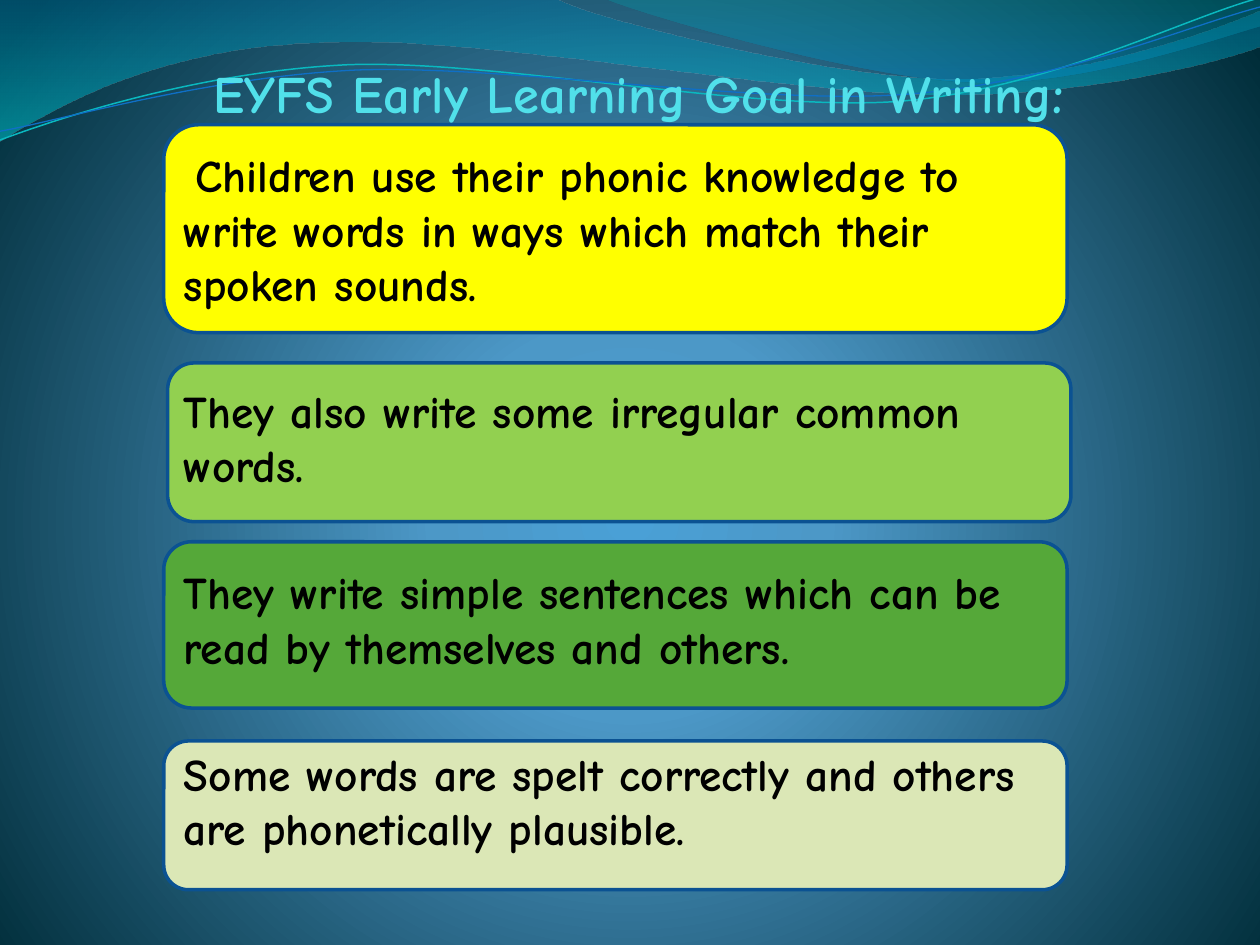
from dataclasses import dataclass

from pptx import Presentation
from pptx.dml.color import RGBColor
from pptx.enum.shapes import MSO_SHAPE
from pptx.enum.text import MSO_ANCHOR, MSO_AUTO_SIZE, PP_ALIGN
from pptx.oxml import parse_xml
from pptx.oxml.ns import nsdecls
from pptx.util import Pt

ROUNDED = MSO_SHAPE.ROUNDED_RECTANGLE
BOTTOM, TOP = MSO_ANCHOR.BOTTOM, MSO_ANCHOR.TOP
NO_FIT = MSO_AUTO_SIZE.NONE
CENTER, LEFT = PP_ALIGN.CENTER, PP_ALIGN.LEFT
DOWNWARD = '<a:lin ang="5400000" scaled="0"/>'
RADIAL = ('<a:path path="circle"><a:fillToRect l="10000" t="110000" '
          'r="10000" b="100000"/></a:path>')


@dataclass(frozen=True)
class Theme:
    font: str = "Comic Neue"
    title: str = "51E0EA"
    text: str = "000000"
    border: str = "0B5292"
    border_width: float = 2
    title_size: float = 30
    colon_size: float = 32
    indent_size: float = 18.5
    body_size: float = 25.9
    first_gap: float = 5.2
    goal_gap: float = 41.4


@dataclass(frozen=True)
class Stop:
    position: int
    color: str
    opacity: int = 100


@dataclass(frozen=True)
class Wave:
    start: tuple
    segments: tuple
    stops: tuple = ()
    line: str = ""
    width: float = 0


@dataclass(frozen=True)
class Card:
    left: float
    top: float
    height: float
    color: str
    goal: str


THEME = Theme()
CARD_WIDTH = 516.2
BACKGROUND = (Stop(0, "4AA0D6"), Stop(25, "4C98C7"), Stop(100, "002C38"))
WAVES = (
    Wave((0, -0.5), (
        (317, -1),
        (343, 12, 478, 45, 546, 45), (614, 45, 690, 19, 720, 6),
        (721, 26),
        (708, 32, 626, 55, 537, 54), (448, 54, 275, 20, 185, 24),
        (93, 26, 33, 60, -1, 81)),
        stops=(Stop(0, "0074A1", 45), Stop(100, "00C6CF", 55))),
    Wave((345, -1), (
        (366, 8, 491, 45, 554, 47), (616, 50, 692, 23, 720, 15), (720, 0)),
        stops=(Stop(0, "00A1A9", 30), Stop(80, "008BBF", 45))),
    Wave((0, 80), (
        (35, 67, 114, 41, 199, 37), (284, 34, 427, 64, 513, 58),
        (599, 51, 675, 11, 719, -1)), line="0AB8BF", width=0.85),
    Wave((0, 75), (
        (34, 69, 118, 44, 204, 40), (290, 37, 430, 60, 516, 54),
        (602, 48, 678, 15, 720, 4)), line="0F6FC6", width=0.75),
)
CARDS = (
    Card(93.6, 71.3, 118.8, "FFFF00",
         "Children use their phonic knowledge to write words in ways "
         "which match their spoken sounds."),
    Card(95.8, 207.4, 90.7, "92D050",
         "They also write some irregular common words."),
    Card(93.6, 309.6, 95, "55A839",
         "They write simple sentences which can be read by themselves "
         "and others."),
    Card(93.6, 423.4, 85, "DBE7B6",
         "Some words are spelt correctly and others are phonetically "
         "plausible."),
)


def rgb(color: str) -> RGBColor:
    return RGBColor.from_string(color)


def set_gradient(owner, fill, stops: tuple, direction: str) -> None:
    fill.background()
    blank = owner.xpath(".//a:noFill")[0]
    marks = "".join(
        f'<a:gs pos="{s.position * 1000}"><a:srgbClr val="{s.color}">'
        f'<a:alpha val="{s.opacity * 1000}"/></a:srgbClr></a:gs>'
        for s in stops)
    blank.getparent().replace(blank, parse_xml(
        f'<a:gradFill {nsdecls("a")} rotWithShape="1">'
        f"<a:gsLst>{marks}</a:gsLst>{direction}</a:gradFill>"))


def bend_lines(sp, segments: tuple) -> None:
    lines = iter(sp._element.xpath(".//a:lnTo"))
    for segment in segments:
        steps = [next(lines) for _ in range(len(segment) // 2)]
        if len(steps) == 1:
            continue
        curve = parse_xml(f'<a:cubicBezTo {nsdecls("a")}/>')
        steps[0].addprevious(curve)
        for step in steps:
            curve.append(step[0])
            step.getparent().remove(step)


def draw_wave(shapes, wave: Wave) -> None:
    points = [(Pt(seg[i]), Pt(seg[i + 1]))
              for seg in wave.segments for i in range(0, len(seg), 2)]
    builder = shapes.build_freeform(*(Pt(v) for v in wave.start))
    builder.add_line_segments(points, close=bool(wave.stops))
    sp = builder.convert_to_shape()
    bend_lines(sp, wave.segments)
    sp.shadow.inherit = False
    if wave.stops:
        set_gradient(sp._element.spPr, sp.fill, wave.stops, DOWNWARD)
        sp.line.fill.background()
    else:
        sp.fill.background()
        sp.line.color.rgb = rgb(wave.line)
        sp.line.width = Pt(wave.width)


def draw_card(shapes, card: Card) -> None:
    sp = shapes.add_shape(ROUNDED, Pt(card.left), Pt(card.top),
                          Pt(CARD_WIDTH), Pt(card.height))
    sp.shadow.inherit = False
    sp.fill.solid()
    sp.fill.fore_color.rgb = rgb(card.color)
    sp.line.color.rgb = rgb(THEME.border)
    sp.line.width = Pt(THEME.border_width)


def place_text(sp, box: tuple, anchor, inset: float):
    sp.left, sp.top, sp.width, sp.height = (Pt(v) for v in box)
    tf = sp.text_frame
    tf.word_wrap = True
    tf.auto_size = NO_FIT
    tf.vertical_anchor = anchor
    tf.margin_left, tf.margin_right = Pt(0), Pt(1.44)
    tf.margin_top = tf.margin_bottom = Pt(inset)
    return tf


def style(p, size: float, color: str, align) -> None:
    p.alignment = align
    p.font.name = THEME.font
    p.font.size = Pt(size)
    p.font.bold = True
    p.font.color.rgb = rgb(color)


def add_run(p, text: str, size: float) -> None:
    r = p.add_run()
    r.text = text
    r.font.size = Pt(size)


def main() -> None:
    prs = Presentation()
    prs.slide_width, prs.slide_height = Pt(720), Pt(540)
    s = prs.slides.add_slide(prs.slide_layouts[0])
    set_gradient(s._element.cSld, s.background.fill, BACKGROUND, RADIAL)
    title, body = s.placeholders
    for wave in WAVES:
        draw_wave(s.shapes, wave)
    for card in reversed(CARDS):
        draw_card(s.shapes, card)

    p = place_text(title, (87.8, 20.2, 555.8, 51.1), BOTTOM, 0).paragraphs[0]
    style(p, THEME.title_size, THEME.title, CENTER)
    add_run(p, "EYFS Early Learning Goal in Writing", THEME.title_size)
    add_run(p, ":", THEME.colon_size)

    tf = place_text(body, (105.1, 80.6, 504.7, 421.9), TOP, 3.6)
    for i, card in enumerate(CARDS):
        p = tf.add_paragraph() if i else tf.paragraphs[0]
        style(p, THEME.body_size, THEME.text, LEFT)
        p.space_before = Pt(THEME.goal_gap if i else THEME.first_gap)
        if i == 0:
            add_run(p, " ", THEME.indent_size)
        add_run(p, card.goal, THEME.body_size)

    for sp in (title, body):
        s.shapes._spTree.append(sp._element)
    prs.save("out.pptx")


if __name__ == "__main__":
    main()
